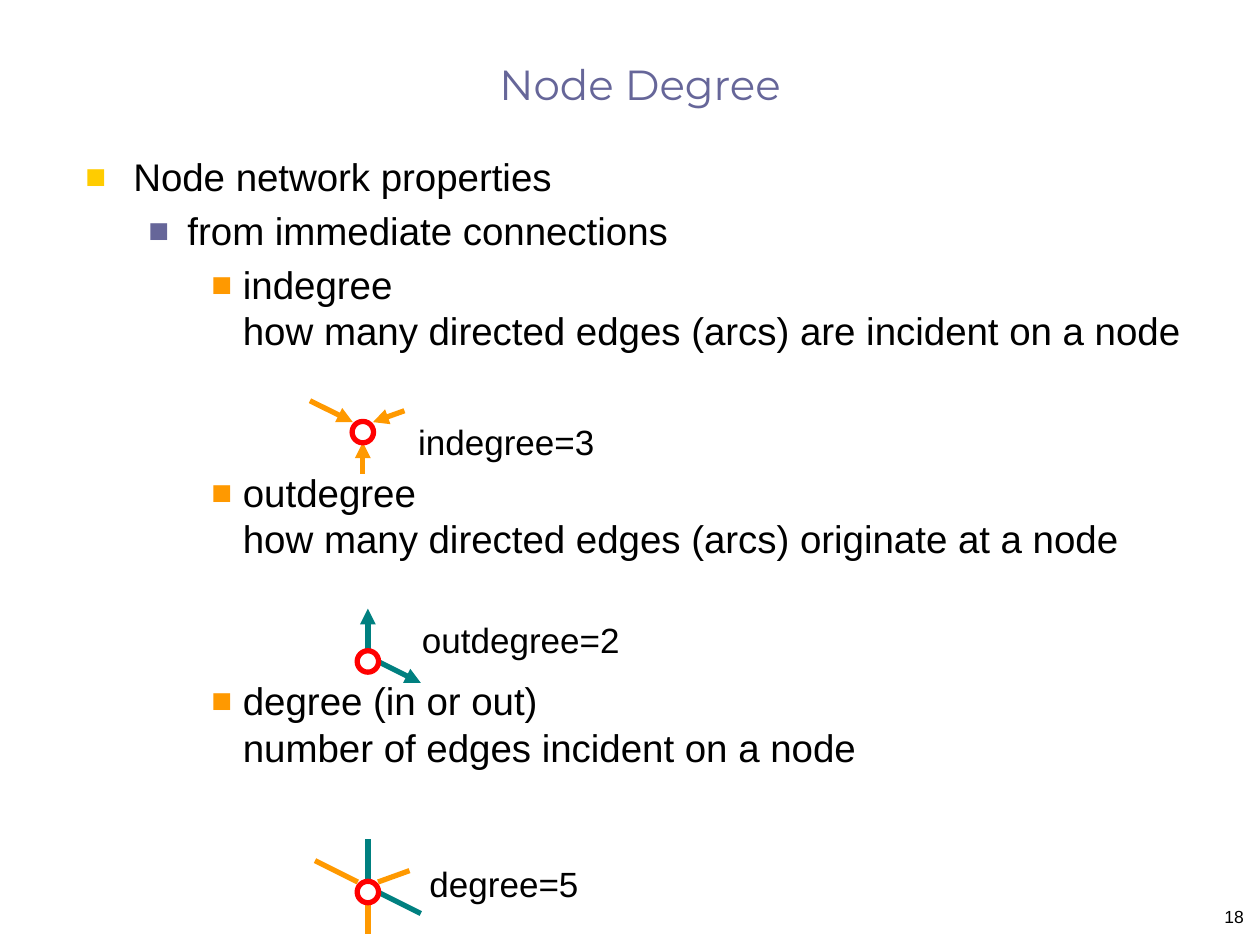
"""Build a slide that explains indegree, outdegree and degree of a network node."""
from typing import Any, NamedTuple

import lxml.etree
import pptx
import pptx.dml.color
import pptx.enum.shapes
import pptx.enum.text
import pptx.oxml.ns
import pptx.util

Inches = pptx.util.Inches
Pt = pptx.util.Pt
Align = pptx.enum.text.PP_ALIGN
Anchor = pptx.enum.text.MSO_ANCHOR

COLORS = {
    "title": "666699",
    "text": "000000",
    "first": "FFCC00",
    "second": "666699",
    "third": "FF9900",
    "incoming": "FF9900",
    "outgoing": "008080",
    "node": "FF0000",
}
RADIUS = 0.085
STROKE = Pt(3)


class Bullet(NamedTuple):
    text: str
    color: str
    margin: float
    hanging: float
    before: float


class Edge(NamedTuple):
    color: str
    start: tuple[float, float]
    end: tuple[float, float]


class Diagram(NamedTuple):
    label: str
    center: tuple[float, float]
    label_box: tuple[float, float, float, float]
    edges: list[Edge]
    arrows: bool


BULLETS = [
    Bullet("Node network properties", "first", 0.38, 0.38, 0),
    Bullet("from immediate connections", "second", 0.81, 0.31, 4.5),
    Bullet("indegree\nhow many directed edges (arcs) are incident on a node",
           "third", 1.25, 0.25, 4.5),
    Bullet("outdegree\nhow many directed edges (arcs) originate at a node",
           "third", 1.25, 0.25, 66.3),
    Bullet("degree (in or out)\nnumber of edges incident on a node",
           "third", 1.25, 0.25, 66.3),
]
INCOMING = [
    Edge("incoming", (0.33, -0.17), (0.08, -0.08)),
    Edge("incoming", (-0.42, -0.25), (-0.08, -0.08)),
    Edge("incoming", (0, 0.33), (0, 0.08)),
]
OUTGOING = [
    Edge("outgoing", (0, -0.08), (0, -0.42)),
    Edge("outgoing", (0.08, 0), (0.42, 0.17)),
]
DIAGRAMS = [
    Diagram("outdegree=2", (2.92, 5.25), (3.25, 4.86, 1.78, 0.44), OUTGOING, True),
    Diagram("indegree=3", (2.88, 3.43), (3.22, 3.29, 1.61, 0.44), INCOMING, True),
    Diagram("degree=5", (2.92, 7.08), (3.31, 6.8, 1.39, 0.44), INCOMING + OUTGOING, False),
]


def rgb(name: str) -> pptx.dml.color.RGBColor:
    """Return the named colour."""
    return pptx.dml.color.RGBColor.from_string(COLORS[name])


def apply(target: Any, values: dict[str, Any]) -> None:
    """Set each attribute of the target from the values."""
    for name, value in values.items():
        setattr(target, name, value)


def add_element(parent: Any, tag: str, **attributes: str) -> Any:
    """Append a DrawingML element to the parent."""
    return lxml.etree.SubElement(parent, pptx.oxml.ns.qn(tag), attributes)


def add_box(shapes: Any, area: tuple[float, float, float, float],
            frame_format: dict[str, Any]) -> Any:
    """Add an empty text box and return its text frame."""
    box = shapes.add_textbox(*map(Inches, area))
    apply(box.text_frame, frame_format)
    return box.text_frame


def write(para: Any, text: str, size: float, color: str = "text",
          font: str = "Arial", **layout: Any) -> None:
    """Write text into a paragraph in one style."""
    para.text = text
    apply(para, layout)
    for span in para.runs:
        apply(span.font, {"name": font, "size": Pt(size)})
        span.font.color.rgb = rgb(color)


def add_bullets(shapes: Any, bullets: list[Bullet]) -> None:
    """Add the bulleted body text."""
    frame = add_box(shapes, (0.58, 1.17, 9, 5.5), {"word_wrap": True})
    for index, bullet in enumerate(bullets):
        para = frame.add_paragraph() if index else frame.paragraphs[0]
        properties = para._p.get_or_add_pPr()
        properties.set("marL", str(Inches(bullet.margin)))
        properties.set("indent", str(-Inches(bullet.hanging)))
        paint = add_element(properties, "a:buClr")
        add_element(paint, "a:srgbClr", val=COLORS[bullet.color])
        add_element(properties, "a:buSzPct", val="90000")
        add_element(properties, "a:buFont", typeface="Arial")
        add_element(properties, "a:buChar", char="■")
        write(para, bullet.text, 22, line_spacing=Pt(26.3))
        if index:
            para.space_before = Pt(bullet.before)


def add_edge(shapes: Any, center: tuple[float, float], edge: Edge, arrow: bool) -> None:
    """Draw one edge, given as offsets from the node centre."""
    ends = [Inches(middle + offset)
            for point in (edge.start, edge.end)
            for middle, offset in zip(center, point)]
    connector = shapes.add_connector(pptx.enum.shapes.MSO_CONNECTOR.STRAIGHT, *ends)
    connector.line.color.rgb = rgb(edge.color)
    connector.line.width = STROKE
    if arrow:
        add_element(connector.line._get_or_add_ln(), "a:tailEnd", type="triangle")
    add_element(connector._element.spPr, "a:effectLst")


def add_diagram(shapes: Any, diagram: Diagram) -> None:
    """Draw a node with its edges and label as one group."""
    members = shapes.add_group_shape().shapes
    for edge in diagram.edges:
        add_edge(members, diagram.center, edge, diagram.arrows)
    left, top = (Inches(middle - RADIUS) for middle in diagram.center)
    node = members.add_shape(pptx.enum.shapes.MSO_SHAPE.OVAL, left, top,
                             Inches(2 * RADIUS), Inches(2 * RADIUS))
    node.shadow.inherit = False
    node.fill.background()
    node.line.color.rgb = rgb("node")
    node.line.width = STROKE
    frame = add_box(members, diagram.label_box, {"word_wrap": False})
    write(frame.paragraphs[0], diagram.label, 20)


def main() -> None:
    """Build and save the deck."""
    deck = pptx.Presentation()
    apply(deck, {"slide_width": Inches(10), "slide_height": Inches(7.5)})
    page = deck.slides.add_slide(deck.slide_layouts[6])
    title = add_box(page.shapes, (0.58, 0.33, 9, 0.58),
                    {"word_wrap": True, "vertical_anchor": Anchor.BOTTOM})
    write(title.paragraphs[0], "Node Degree", 24, "title", "Montserrat",
          alignment=Align.CENTER)
    add_bullets(page.shapes, BULLETS)
    for diagram in DIAGRAMS:
        add_diagram(page.shapes, diagram)
    number = add_box(page.shapes, (9.55, 7.14, 0.42, 0.33), {"word_wrap": True})
    write(number.paragraphs[0], "18", 10, alignment=Align.RIGHT)
    deck.save("out.pptx")


if __name__ == "__main__":
    main()
